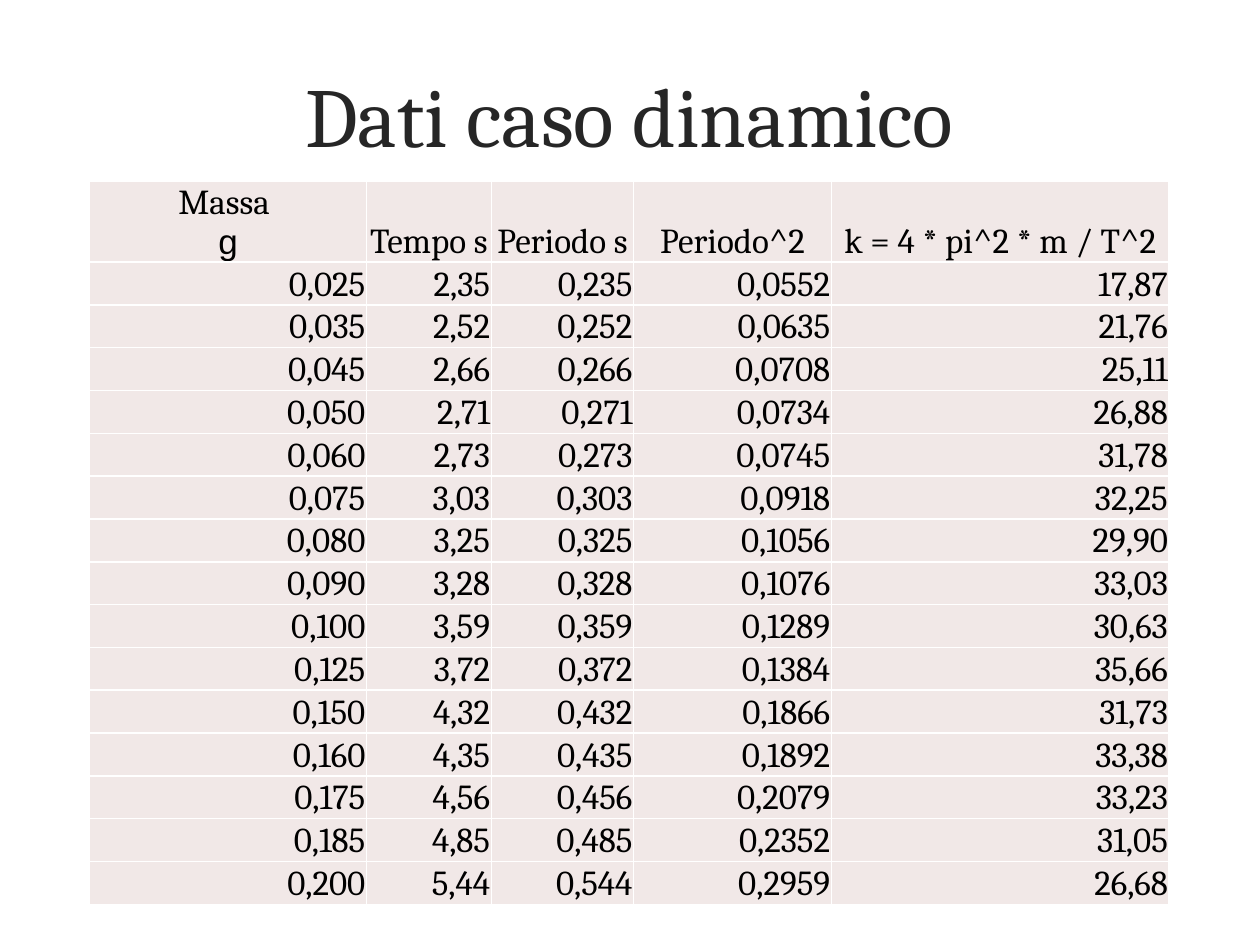
import pptx
import pptx.dml.color
import pptx.enum.text
import pptx.oxml.xmlchemy
import pptx.util
from pptx.util import Inches

COLORS = {"title": "262626", "text": "000000", "cell": "F1E8E7", "border": "FFFFFF"}
ALIGN = pptx.enum.text.PP_ALIGN
ANCHOR = pptx.enum.text.MSO_ANCHOR

COL_WIDTHS = [2.2, 0.99, 1.13, 1.57, 2.68]
ROW_HEIGHT = 0.34
HEADERS = ["Massa \ng", "Tempo s", "Periodo s", "Periodo^2", "k = 4 * pi^2 * m / T^2"]
MEASUREMENTS = [
    ["0,025", "2,35", "0,235", "0,0552", "17,87"],
    ["0,035", "2,52", "0,252", "0,0635", "21,76"],
    ["0,045", "2,66", "0,266", "0,0708", "25,11"],
    ["0,050", "2,71", "0,271", "0,0734", "26,88"],
    ["0,060", "2,73", "0,273", "0,0745", "31,78"],
    ["0,075", "3,03", "0,303", "0,0918", "32,25"],
    ["0,080", "3,25", "0,325", "0,1056", "29,90"],
    ["0,090", "3,28", "0,328", "0,1076", "33,03"],
    ["0,100", "3,59", "0,359", "0,1289", "30,63"],
    ["0,125", "3,72", "0,372", "0,1384", "35,66"],
    ["0,150", "4,32", "0,432", "0,1866", "31,73"],
    ["0,160", "4,35", "0,435", "0,1892", "33,38"],
    ["0,175", "4,56", "0,456", "0,2079", "33,23"],
    ["0,185", "4,85", "0,485", "0,2352", "31,05"],
    ["0,200", "5,44", "0,544", "0,2959", "26,68"],
]


def rgb(name):
    return pptx.dml.color.RGBColor.from_string(COLORS[name])


class SlideBuilder:
    font = "Cambria"
    unit_font = "Arial"
    title_size = 48
    cell_size = 20

    def __init__(self, slide):
        self.s = slide

    def format_paragraph(self, p, size, color, align, font=None):
        p.alignment = align
        p.font.name = font or self.font
        p.font.size = pptx.util.Pt(size)
        p.font.color.rgb = rgb(color)

    def title(self, text, left, top, width, height):
        sp = self.s.shapes.title
        sp.left, sp.top = Inches(left), Inches(top)
        sp.width, sp.height = Inches(width), Inches(height)
        tf = sp.text_frame
        tf.text = text
        tf.vertical_anchor = ANCHOR.MIDDLE
        self.format_paragraph(tf.paragraphs[0], self.title_size, "title", ALIGN.CENTER)

    def borders(self, cell):
        tc_pr = cell._tc.get_or_add_tcPr()
        for side in ("a:lnL", "a:lnR", "a:lnT", "a:lnB"):
            ln = pptx.oxml.xmlchemy.OxmlElement(side)
            ln.set("w", str(pptx.util.Pt(1)))
            fill = pptx.oxml.xmlchemy.OxmlElement("a:solidFill")
            color = pptx.oxml.xmlchemy.OxmlElement("a:srgbClr")
            color.set("val", COLORS["border"])
            fill.append(color)
            ln.append(fill)
            tc_pr.append(ln)

    def cell(self, cell, text, align):
        self.borders(cell)
        cell.fill.solid()
        cell.fill.fore_color.rgb = rgb("cell")
        cell.margin_left = cell.margin_right = cell.margin_top = Inches(0.01)
        cell.margin_bottom = 0
        cell.vertical_anchor = ANCHOR.BOTTOM
        cell.text_frame.text = text
        for p in cell.text_frame.paragraphs:
            font = self.unit_font if p.text == "g" else self.font
            self.format_paragraph(p, self.cell_size, "text", align, font)

    def table(self, rows, left, top):
        table = self.s.shapes.add_table(
            len(rows), len(COL_WIDTHS), Inches(left), Inches(top),
            Inches(sum(COL_WIDTHS)), Inches(ROW_HEIGHT * len(rows))).table
        table.first_row = table.horz_banding = False
        for column, width in zip(table.columns, COL_WIDTHS):
            column.width = Inches(width)
        for i, values in enumerate(rows):
            table.rows[i].height = Inches(ROW_HEIGHT)
            align = ALIGN.RIGHT if i else ALIGN.CENTER
            for j, value in enumerate(values):
                self.cell(table.cell(i, j), value, align)


def main():
    prs = pptx.Presentation()
    prs.slide_width, prs.slide_height = Inches(10), Inches(7.5)
    builder = SlideBuilder(prs.slides.add_slide(prs.slide_layouts[5]))

    # Title
    builder.title("Dati caso dinamico", 0.6, 0.48, 8.79, 0.85)

    # Measurements
    builder.table([HEADERS] + MEASUREMENTS, 0.71, 1.44)

    prs.save("out.pptx")


if __name__ == "__main__":
    main()
